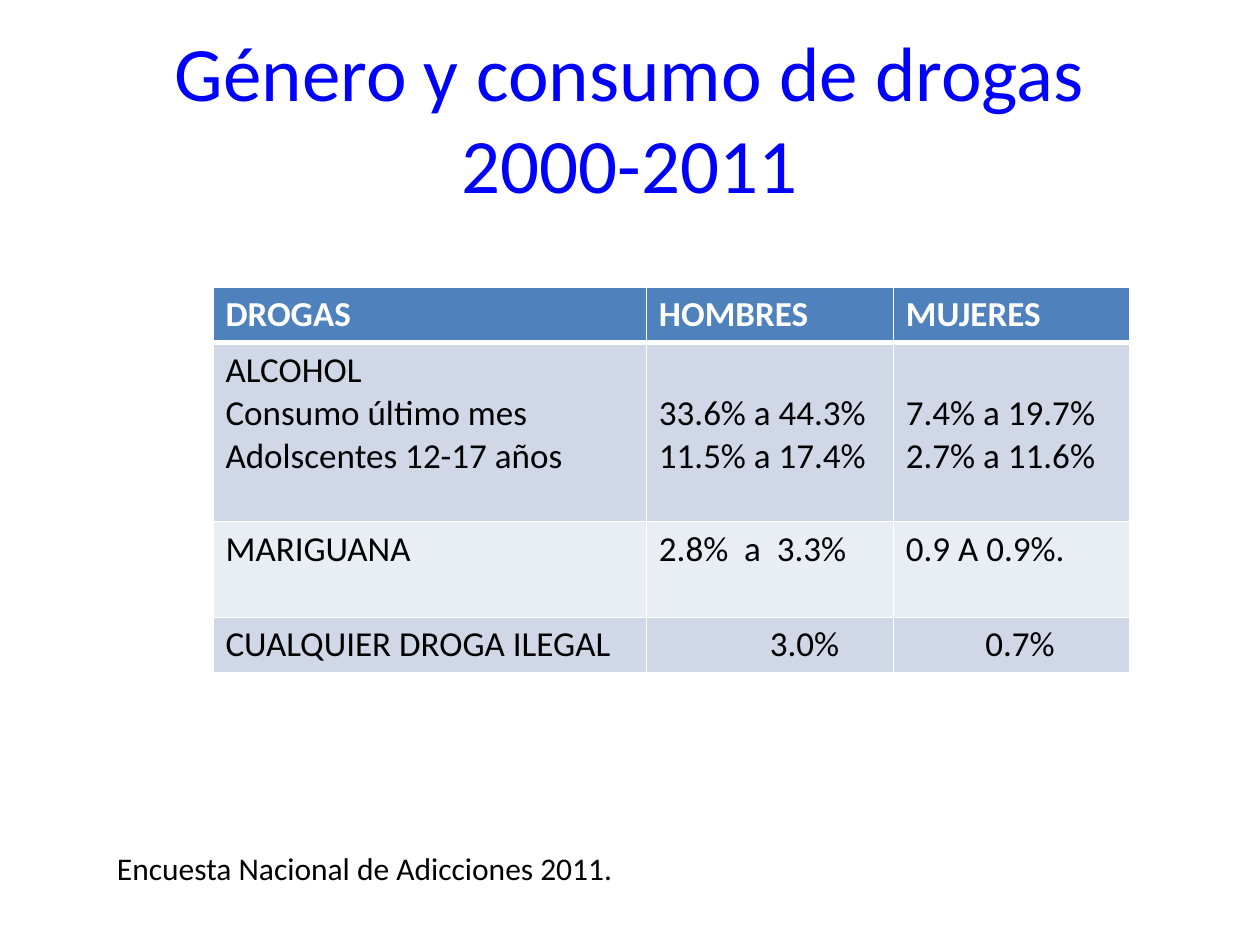
import pptx
import pptx.dml.color
import pptx.enum.text
import pptx.oxml.ns
import pptx.util
import lxml.etree

Inches = pptx.util.Inches


def color(hex_value):
    return pptx.dml.color.RGBColor.from_string(hex_value)


def add_border(cell, side, points):
    """Draw a white line on one side of a table cell (L, R, T or B)."""
    qn = pptx.oxml.ns.qn
    properties = cell._tc.get_or_add_tcPr()
    line = lxml.etree.SubElement(properties, qn(f"a:ln{side}"), w=str(pptx.util.Pt(points)))
    fill = lxml.etree.SubElement(line, qn("a:solidFill"))
    lxml.etree.SubElement(fill, qn("a:srgbClr"), val="FFFFFF")


presentation = pptx.Presentation()
presentation.slide_width = Inches(10)
presentation.slide_height = Inches(7.5)
slide = presentation.slides.add_slide(presentation.slide_layouts[6])

# Title and source note: text, box, size, color, alignment, anchor
align = pptx.enum.text.PP_ALIGN
anchor = pptx.enum.text.MSO_ANCHOR
text_boxes = [
    ("Género y consumo de drogas\v2000-2011", (0.5, 0.3, 9, 1.25), 44, "0000FF",
     align.CENTER, anchor.MIDDLE),
    ("Encuesta Nacional de Adicciones 2011.", (0.83, 6.69, 8.37, 0.4), 18, "000000",
     align.LEFT, anchor.TOP),
]
for text, box, size, text_color, alignment, vertical_anchor in text_boxes:
    text_frame = slide.shapes.add_textbox(*map(Inches, box)).text_frame
    text_frame.word_wrap = True
    text_frame.vertical_anchor = vertical_anchor
    paragraph = text_frame.paragraphs[0]
    paragraph.text = text
    paragraph.alignment = alignment
    paragraph.font.name = "Calibri"
    paragraph.font.size = pptx.util.Pt(size)
    paragraph.font.color.rgb = color(text_color)

# Table
rows = [
    ["DROGAS", "HOMBRES", "MUJERES"],
    ["ALCOHOL\nConsumo último mes\nAdolscentes 12-17 años",
     "33.6% a 44.3%\n11.5% a 17.4%", "7.4% a 19.7%\n2.7% a 11.6%"],
    ["MARIGUANA", "2.8%  a  3.3%", "0.9 A 0.9%."],
    ["CUALQUIER DROGA ILEGAL", "3.0%", "0.7%"],
]
column_widths = [3.44, 1.96, 1.88]
row_heights = [0.44, 1.42, 0.76, 0.44]
row_fills = ["4F81BD", "D0D8E8", "E9EDF4", "D0D8E8"]
table = slide.shapes.add_table(
    len(rows), len(column_widths), Inches(1.69), Inches(2.28),
    Inches(sum(column_widths)), Inches(sum(row_heights))).table
for column, width in zip(table.columns, column_widths):
    column.width = Inches(width)

for row_index, texts in enumerate(rows):
    table.rows[row_index].height = Inches(row_heights[row_index])
    is_header = row_index == 0
    for column_index, text in enumerate(texts):
        cell = table.cell(row_index, column_index)
        cell.text = text
        # The line below the header is thicker
        add_border(cell, "L", 1)
        add_border(cell, "R", 1)
        add_border(cell, "T", 3 if row_index == 1 else 1)
        add_border(cell, "B", 3 if is_header else 1)
        cell.fill.solid()
        cell.fill.fore_color.rgb = color(row_fills[row_index])
        for paragraph in cell.text_frame.paragraphs:
            paragraph.font.name = "Calibri"
            paragraph.font.size = pptx.util.Pt(20)
            paragraph.font.bold = is_header
            paragraph.font.color.rgb = color("FFFFFF" if is_header else "000000")

# Alcohol figures start one line down, level with their labels
for column_index in (1, 2):
    table.cell(1, column_index).margin_top = Inches(0.39)

# Figures of the last row are indented
table.cell(3, 1).margin_left = Inches(0.98)
table.cell(3, 2).margin_left = Inches(0.73)

presentation.save("out.pptx")
